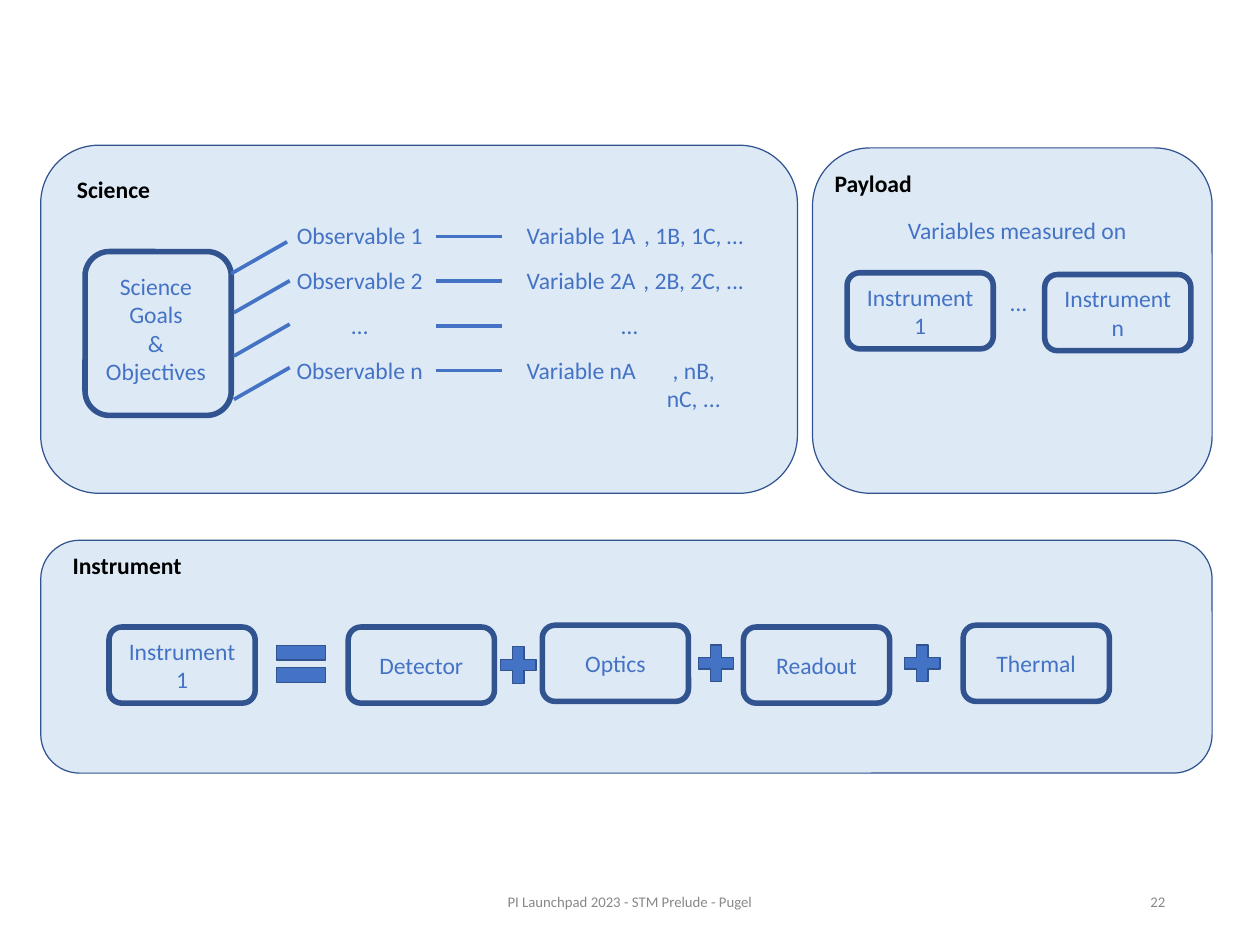
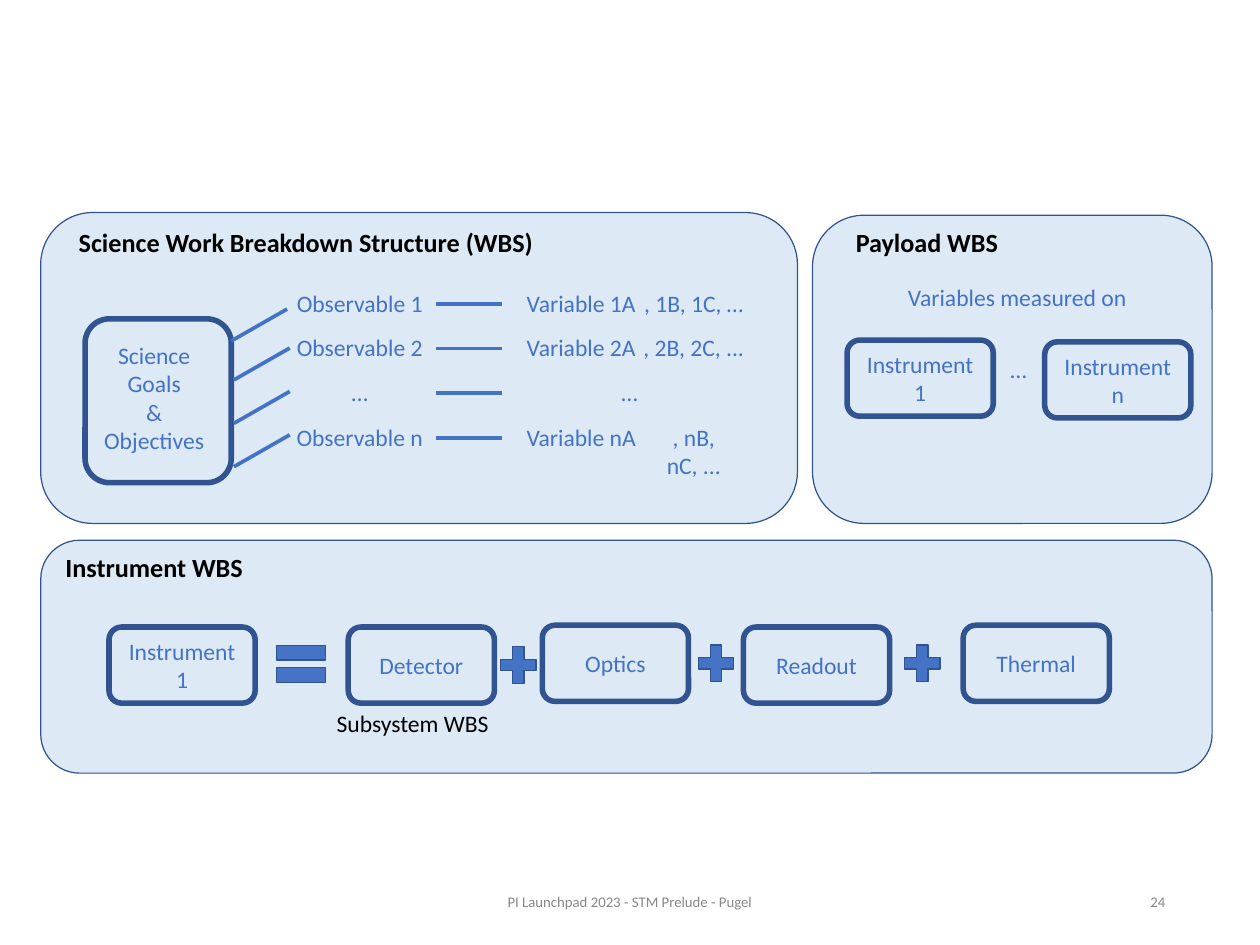
from dataclasses import dataclass

from lxml import etree
from pptx import Presentation
from pptx import util as u
from pptx.dml.color import RGBColor
from pptx.enum import shapes, text
from pptx.oxml import ns

# Square grid: every length below counts cells of a tenth of an inch
CELL = u.Inches(0.1)
COLUMNS, ROWS = 142.2, 106.7
KIND = shapes.MSO_SHAPE
ALIGN = text.PP_ALIGN


@dataclass(frozen=True)
class Theme:
    font: str = "Calibri"
    accent: str = "4472C4"
    outline: str = "31538F"
    panel: str = "DDEAF6"
    ink: str = "000000"
    muted: str = "888888"
    body: float = 19.2
    large: float = 21.3
    small: float = 12
    thin: float = 1
    rule: float = 3
    frame: float = 4.5


@dataclass(frozen=True)
class Box:
    left: float
    top: float
    width: float
    height: float

    def inner(self, dx, dy, width, height):
        return Box(self.left + dx, self.top + dy, width, height)

    def emu(self):
        return [cells(v) for v in (self.left, self.top, self.width, self.height)]


@dataclass(frozen=True)
class Heading:
    wording: str
    dx: float
    dy: float
    width: float


THEME = Theme()
LABEL_HEIGHT = 4.2
STAGE_SIZE = (16.5, 8.6)
FOOTER = "PI Launchpad 2023 - STM Prelude - Pugel"
INSTRUMENT_PANEL = Box(4.6, 61, 132.2, 26.3)

GOALS = "Science\nGoals\n&\nObjectives"
OBSERVABLES = [
    ("Observable 1", "Variable 1A", ", 1B, 1C, …"),
    ("Observable 2", "Variable 2A", ", 2B, 2C, ..."),
    ("…", "…", ""),
    ("Observable n", "Variable nA", ", nB, nC, ..."),
]
# Start of each line that fans out from the goals
FAN = [(21.5, 14.5), (21.8, 18.9), (21.8, 23.8), (21.8, 28.7)]

STAGES = [
    ("Instrument 1", 7.7, 9.8),
    ("Detector", 34.7, 9.8),
    ("Optics", 56.6, 9.6),
    ("Readout", 79.3, 9.8),
    ("Thermal", 104.1, 9.6),
]
PLUSES = [(51.2, 11.3), (73.5, 11.1), (96.8, 11.1)]


# Basic elements
def cells(count):
    return round(count * CELL)


def rgb(value):
    return RGBColor.from_string(value)


def write(frame, wording, color=THEME.accent, size=THEME.body,
          align=ALIGN.CENTER, bold=False):
    for index, line in enumerate(wording.split("\n")):
        paragraph = frame.add_paragraph() if index else frame.paragraphs[0]
        paragraph.text = line
        paragraph.alignment = align
        font = paragraph.font
        font.name, font.size, font.bold = THEME.font, u.Pt(size), bold
        font.color.rgb = rgb(color)


def add_label(slide, box, wording, wrap=False, anchor=text.MSO_ANCHOR.TOP, **style):
    frame = slide.shapes.add_textbox(*box.emu()).text_frame
    frame.word_wrap = wrap
    frame.vertical_anchor = anchor
    write(frame, wording, **style)


def add_figure(slide, kind, box, fill=None, width=THEME.thin):
    figure = slide.shapes.add_shape(kind, *box.emu())
    figure.shadow.inherit = False
    if fill:
        figure.fill.solid()
        figure.fill.fore_color.rgb = rgb(fill)
    else:
        figure.fill.background()
    figure.line.color.rgb = rgb(THEME.outline)
    figure.line.width = u.Pt(width)
    return figure


def add_frame(slide, box, wording=""):
    figure = add_figure(slide, KIND.ROUNDED_RECTANGLE, box, width=THEME.frame)
    if wording:
        figure.text_frame.word_wrap = True
        figure.text_frame.vertical_anchor = text.MSO_ANCHOR.MIDDLE
        write(figure.text_frame, wording)


def add_rule(slide, box, x, y, run, rise=0):
    left, top = box.left + x, box.top + y
    rule = slide.shapes.add_connector(
        shapes.MSO_CONNECTOR.STRAIGHT,
        *(cells(v) for v in (left, top, left + run, top - rise)))
    rule.line.color.rgb = rgb(THEME.accent)
    rule.line.width = u.Pt(THEME.rule)
    etree.SubElement(rule._element.spPr, ns.qn("a:effectLst"))


def add_panel(slide, box, heading, size):
    add_figure(slide, KIND.ROUNDED_RECTANGLE, box, THEME.panel)
    place = box.inner(heading.dx, heading.dy, heading.width, LABEL_HEIGHT)
    add_label(slide, place, heading.wording, wrap=True, color=THEME.ink,
              size=size, align=ALIGN.LEFT, bold=True)


# Regions
def science_region(slide, box, heading, size, goals_at):
    add_panel(slide, box, heading, size)
    add_frame(slide, box.inner(5, 12, 16.5, 18.5))
    add_label(slide, box.inner(*goals_at, 13.4, 17.2), GOALS)
    for x, y in FAN:
        add_rule(slide, box, x, y, run=6.3, rise=3.6)
    for row, (observable, variable, others) in enumerate(OBSERVABLES):
        y = 8.1 + 5.05 * row
        add_label(slide, box.inner(27.8, y, 16.4, LABEL_HEIGHT), observable)
        add_rule(slide, box, 44.6, y + 2.2, run=7.5)
        variable_width = 14.6 if others else 25.5
        add_label(slide, box.inner(53.7, y, variable_width, LABEL_HEIGHT), variable)
        if others:
            add_label(slide, box.inner(67, y, 13.4, LABEL_HEIGHT), others)


def payload_region(slide, box, heading, size):
    add_panel(slide, box, heading, size)
    add_label(slide, box.inner(9.2, 7.2, 27.8, LABEL_HEIGHT), "Variables measured on")
    add_frame(slide, box.inner(3.9, 14.1, *STAGE_SIZE), "Instrument 1")
    add_label(slide, box.inner(21.3, 15.3, 3.9, LABEL_HEIGHT), "…")
    add_frame(slide, box.inner(26.2, 14.3, *STAGE_SIZE), "Instrument n")


def instrument_region(slide, box, heading, size, subsystem):
    add_panel(slide, box, heading, size)
    for wording, x, y in STAGES:
        add_frame(slide, box.inner(x, y, *STAGE_SIZE), wording)
    add_figure(slide, KIND.MATH_EQUAL, box.inner(25.6, 10.4, 7.5, 7.1), THEME.accent)
    for x, y in PLUSES:
        add_figure(slide, KIND.MATH_PLUS, box.inner(x, y, 5.4, 5.6), THEME.accent)
    if subsystem:
        add_label(slide, box.inner(32.4, 18.5, 19.6, LABEL_HEIGHT), subsystem,
                  wrap=True, color=THEME.ink, align=ALIGN.LEFT)


def footer_region(slide, box, number):
    for wording, x, width, align in (
            (FOOTER, 0, 48, ALIGN.CENTER), (number, 53.4, 32, ALIGN.RIGHT)):
        add_label(slide, box.inner(x, 0, width, box.height), wording, wrap=True,
                  anchor=text.MSO_ANCHOR.MIDDLE, color=THEME.muted,
                  size=THEME.small, align=align)


# Slide type
def breakdown_slide(deck, top, height, size, headings, goals_at, number, subsystem=""):
    slide = deck.slides.add_slide(deck.slide_layouts[6])
    science, payload, instrument = headings
    instrument_region(slide, INSTRUMENT_PANEL, instrument, size, subsystem)
    payload_region(slide, Box(91.7, top + 0.3, 45.1, height - 0.3), payload, size)
    science_region(slide, Box(4.6, top, 85.4, height), science, size, goals_at)
    footer_region(slide, Box(47.1, 98.9, 85.4, 5.7), number)


def main():
    deck = Presentation()
    deck.slide_width, deck.slide_height = cells(COLUMNS), cells(ROWS)
    breakdown_slide(
        deck, top=16.4, height=39.3, size=THEME.body,
        headings=(Heading("Science", 3.1, 2.8, 10.3),
                  Heading("Payload", 1.5, 1.9, 11.6),
                  Heading("Instrument", 2.6, 0.7, 14.5)),
        goals_at=(6.3, 13.8), number="22")
    breakdown_slide(
        deck, top=24, height=35.1, size=THEME.large,
        headings=(Heading("Science Work Breakdown Structure (WBS)", 3.3, 1.1, 54.4),
                  Heading("Payload WBS", 3.9, 0.8, 18.4),
                  Heading("Instrument WBS", 1.8, 0.7, 22.4)),
        goals_at=(6.1, 14), number="24", subsystem="Subsystem WBS")
    deck.save("out.pptx")


if __name__ == "__main__":
    main()
